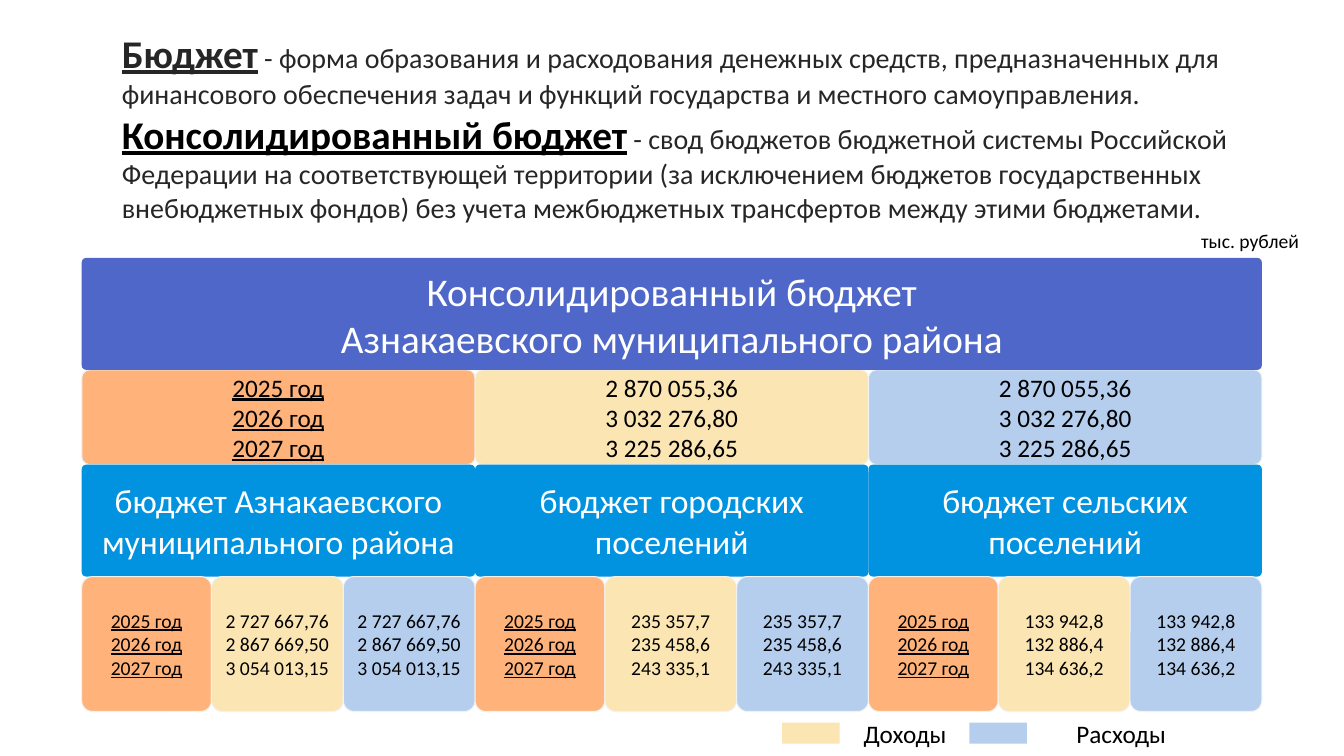
from pptx import Presentation
from pptx.dml.color import RGBColor
from pptx.enum import shapes, text
from pptx.util import Cm, Pt

FONT = "Calibri"
BLACK = RGBColor(0x00, 0x00, 0x00)
WHITE = RGBColor(0xFF, 0xFF, 0xFF)
DARK = RGBColor(0x26, 0x26, 0x26)
BORDER = RGBColor(0xF2, 0xF2, 0xF2)
INDIGO = RGBColor(0x4E, 0x67, 0xC8)
BLUE = RGBColor(0x02, 0x93, 0xE0)
YEAR_FILL = RGBColor(0xFF, 0xB3, 0x7A)
INCOME_FILL = RGBColor(0xFB, 0xE6, 0xB3)
EXPENSE_FILL = RGBColor(0xB5, 0xCE, 0xED)

YEARS = ["2025 год", "2026 год", "2027 год"]
TOTALS = ["2 870 055,36", "3 032 276,80", "3 225 286,65"]
BUDGETS = [
    ("бюджет Азнакаевского муниципального района",
     ["2 727 667,76", "2 867 669,50", "3 054 013,15"]),
    ("бюджет городских поселений", ["235 357,7", "235 458,6", "243 335,1"]),
    ("бюджет сельских поселений", ["133 942,8", "132 886,4", "134 636,2"]),
]
DEFINITIONS = [
    ("Бюджет", DARK,
     " - форма образования и расходования денежных средств, предназначенных для "
     "финансового обеспечения задач и функций государства и местного самоуправления."),
    ("Консолидированный бюджет", BLACK,
     " - свод бюджетов бюджетной системы Российской Федерации на соответствующей "
     "территории (за исключением бюджетов государственных внебюджетных фондов) "
     "без учета межбюджетных трансфертов между этими бюджетами."),
]


def add_run(paragraph, wording, size, color, bold=False, underline=False):
    """Append one formatted run to a paragraph."""
    run = paragraph.add_run()
    run.text = wording
    run.font.name = FONT
    run.font.size = Pt(size)
    run.font.color.rgb = color
    run.font.bold = bold
    run.font.underline = underline


def add_paragraphs(frame, count):
    """Return the given number of paragraphs of an empty text frame."""
    return [frame.paragraphs[0]] + [frame.add_paragraph() for _ in range(count - 1)]


def add_block(slide, box, fill, lines=(), size=18, color=BLACK, underline=False,
              corner=None, border=None):
    """Draw a filled block with centred lines; a corner value rounds it."""
    kind = shapes.MSO_SHAPE.RECTANGLE if corner is None else shapes.MSO_SHAPE.ROUNDED_RECTANGLE
    shape = slide.shapes.add_shape(kind, *map(Cm, box))
    if corner is not None:
        shape.adjustments[0] = corner
    shape.shadow.inherit = False
    shape.fill.solid()
    shape.fill.fore_color.rgb = fill
    if border is None:
        shape.line.fill.background()
    else:
        shape.line.color.rgb = border
        shape.line.width = Pt(0.75)
    if lines:
        frame = shape.text_frame
        frame.word_wrap = True
        frame.vertical_anchor = text.MSO_ANCHOR.MIDDLE
        for paragraph, line in zip(add_paragraphs(frame, len(lines)), lines):
            paragraph.alignment = text.PP_ALIGN.CENTER
            add_run(paragraph, line, size, color, underline=underline)


def add_definitions(slide, box):
    """Write the underlined terms with their definitions."""
    frame = slide.shapes.add_textbox(*map(Cm, box)).text_frame
    frame.word_wrap = True
    paragraphs = add_paragraphs(frame, len(DEFINITIONS))
    for paragraph, (term, color, meaning) in zip(paragraphs, DEFINITIONS):
        add_run(paragraph, term, 28, color, bold=True, underline=True)
        add_run(paragraph, meaning, 20, DARK)


def add_unit(slide, box):
    """Write the unit of measure above the scheme."""
    frame = slide.shapes.add_textbox(*map(Cm, box)).text_frame
    frame.word_wrap = False
    add_run(frame.paragraphs[0], "тыс. рублей", 14, BLACK)


def add_figures(slide, box, values, size, year_width):
    """Place years, income and expenses side by side in the box."""
    left, top, width, height = box
    value_width = (width - year_width) / 2
    cells = [
        (left, year_width, YEAR_FILL, YEARS),
        (left + year_width, value_width, INCOME_FILL, values),
        (left + year_width + value_width, value_width, EXPENSE_FILL, values),
    ]
    for cell_left, cell_width, fill, lines in cells:
        add_block(slide, (cell_left, top, cell_width, height), fill, lines, size,
                  underline=lines is YEARS, corner=0.083, border=BORDER)


def add_scheme(slide, box):
    """Draw the consolidated budget above its three component budgets."""
    left, top, width, height = box
    title_height, totals_height = 2.82, 2.39
    totals_top = top + title_height
    budgets_top = totals_top + totals_height
    details_top = budgets_top + title_height
    column = width / len(BUDGETS)
    add_figures(slide, (left, totals_top, width, totals_height), TOTALS, 18, column)
    add_block(slide, (left, top, width, title_height), INDIGO,
              ["Консолидированный бюджет", "Азнакаевского муниципального района"],
              28, WHITE, corner=0.04)
    for index, (name, values) in enumerate(BUDGETS):
        column_left = left + index * column
        add_block(slide, (column_left, budgets_top, column, title_height), BLUE,
                  [name], 24, WHITE, corner=0.04)
        add_figures(slide, (column_left, details_top, column, top + height - details_top),
                    values, 14, 3.27)


def add_legend(slide, box):
    """Draw the colour keys with their labels."""
    left, top, width, height = box
    swatch, gap, pitch = 1.45, 0.2, 4.72
    entries = [("Доходы", INCOME_FILL, 2.9),
               ("Расходы", EXPENSE_FILL, width - pitch - swatch - gap)]
    for index, (label, fill, label_width) in enumerate(entries):
        entry_left = left + index * pitch
        add_block(slide, (entry_left, top, swatch, height), fill)
        add_block(slide, (entry_left + swatch + gap, top, label_width, height), WHITE, [label])


def main():
    """Build and save the presentation."""
    presentation = Presentation()
    presentation.slide_width = Cm(33.87)
    presentation.slide_height = Cm(19.05)
    slide = presentation.slides.add_slide(presentation.slide_layouts[6])
    add_definitions(slide, (2.82, 0.61, 28.45, 5.38))
    add_scheme(slide, (2.06, 6.5, 29.74, 11.43))
    add_legend(slide, (19.71, 18.21, 10.72, 0.53))
    add_unit(slide, (30.02, 5.64, 3.07, 0.86))
    presentation.save("out.pptx")


if __name__ == "__main__":
    main()
